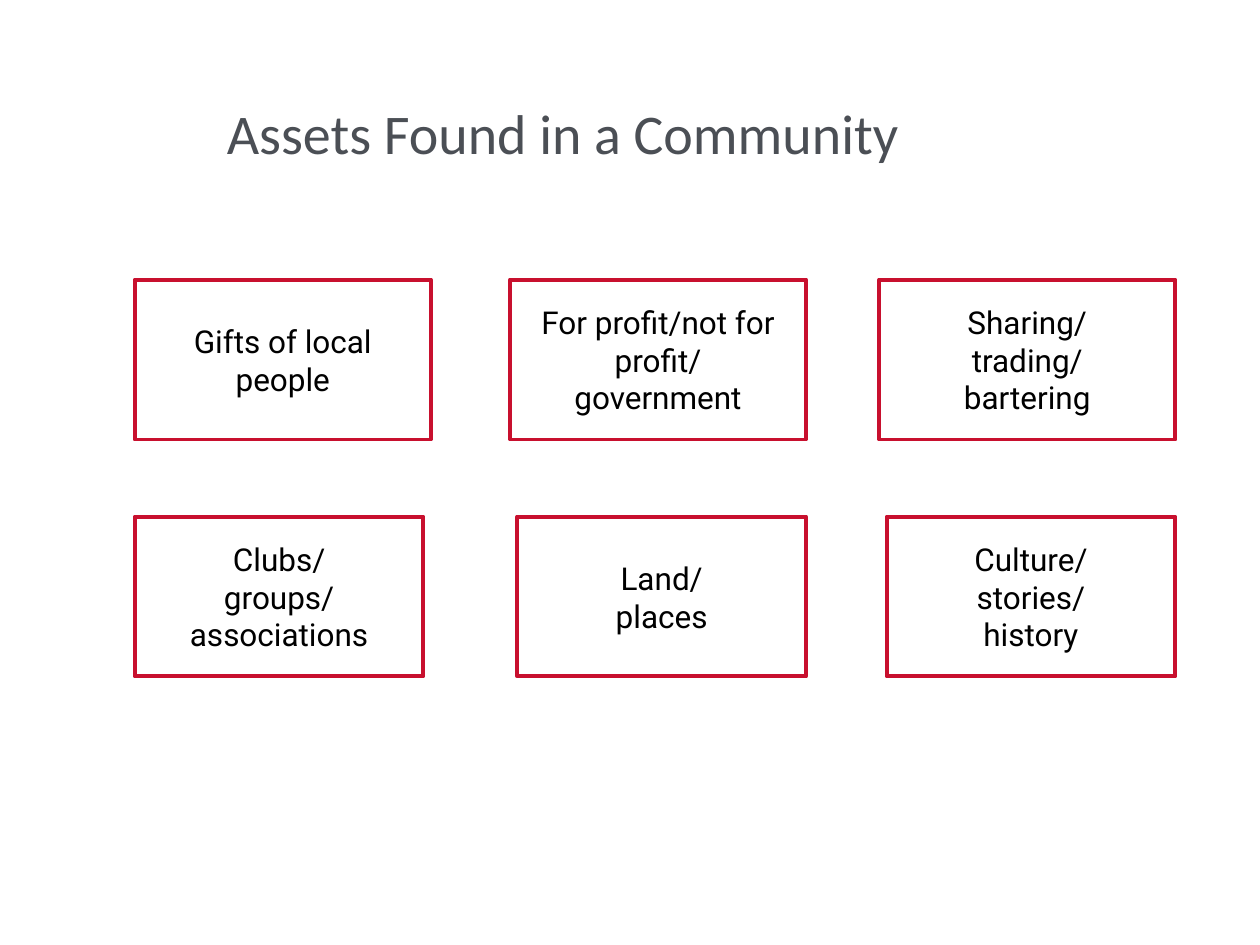
from dataclasses import dataclass

from pptx import Presentation
from pptx.dml.color import RGBColor
from pptx.enum.shapes import MSO_SHAPE as Shape
from pptx.enum.text import MSO_ANCHOR as Anchor, PP_ALIGN as Align
from pptx.util import Pt


@dataclass(frozen=True)
class Theme:
    title_color: RGBColor = RGBColor(0x4B, 0x4F, 0x55)
    border_color: RGBColor = RGBColor(0xC8, 0x10, 0x2E)
    text_color: RGBColor = RGBColor(0, 0, 0)
    title_font: str = "Calibri"
    asset_font: str = "Roboto"
    title_size: float = 32
    asset_size: float = 18
    border_width: float = 2.25


THEME = Theme()

# Layout in points: the first column lines up on the left, the others on the right
FIRST_LEFT = 77
RIGHT_EDGES = (460.6, 671.6)
ASSET_HEIGHT = 91.4

# Each row: top, box width, assets from left to right
ASSET_ROWS = (
    (159.8, 169.2, ("Gifts of local people",
                    "For profit/not for profit/\ngovernment",
                    "Sharing/\ntrading/\nbartering")),
    (295.2, 165, ("Clubs/\ngroups/ associations",
                  "Land/\nplaces",
                  "Culture/\nstories/\nhistory")),
)


def format_runs(paragraph, font_name, size, color):
    for run in paragraph.runs:
        run.font.name = font_name
        run.font.size = Pt(size)
        run.font.color.rgb = color


def set_title(slide, text):
    title = slide.shapes.title
    title.left, title.top = Pt(122.4), Pt(56.9)
    title.width, title.height = Pt(555), Pt(54)
    frame = title.text_frame
    frame.text = text
    frame.vertical_anchor = Anchor.TOP
    heading = frame.paragraphs[0]
    heading.alignment = Align.LEFT
    heading.line_spacing = 0.9
    format_runs(heading, THEME.title_font, THEME.title_size, THEME.title_color)


def add_asset(slide, text, left, top, width):
    asset = slide.shapes.add_shape(
        Shape.RECTANGLE, Pt(left), Pt(top), Pt(width), Pt(ASSET_HEIGHT))
    asset.shadow.inherit = False
    asset.fill.background()
    asset.line.color.rgb = THEME.border_color
    asset.line.width = Pt(THEME.border_width)

    frame = asset.text_frame
    frame.text = text
    frame.word_wrap = True
    frame.vertical_anchor = Anchor.MIDDLE
    frame.margin_left = frame.margin_right = Pt(7.2)
    frame.margin_top = frame.margin_bottom = Pt(7.2)
    for paragraph in frame.paragraphs:
        paragraph.alignment = Align.CENTER
        format_runs(paragraph, THEME.asset_font, THEME.asset_size, THEME.text_color)


def main():
    deck = Presentation()
    deck.slide_width, deck.slide_height = Pt(720), Pt(540)
    slide = deck.slides.add_slide(deck.slide_layouts[5])

    # Heading
    set_title(slide, "Assets Found in a Community")

    # Grid of assets
    for top, width, assets in ASSET_ROWS:
        lefts = (FIRST_LEFT, *(edge - width for edge in RIGHT_EDGES))
        for text, left in zip(assets, lefts):
            add_asset(slide, text, left, top, width)

    deck.save("out.pptx")


if __name__ == "__main__":
    main()
